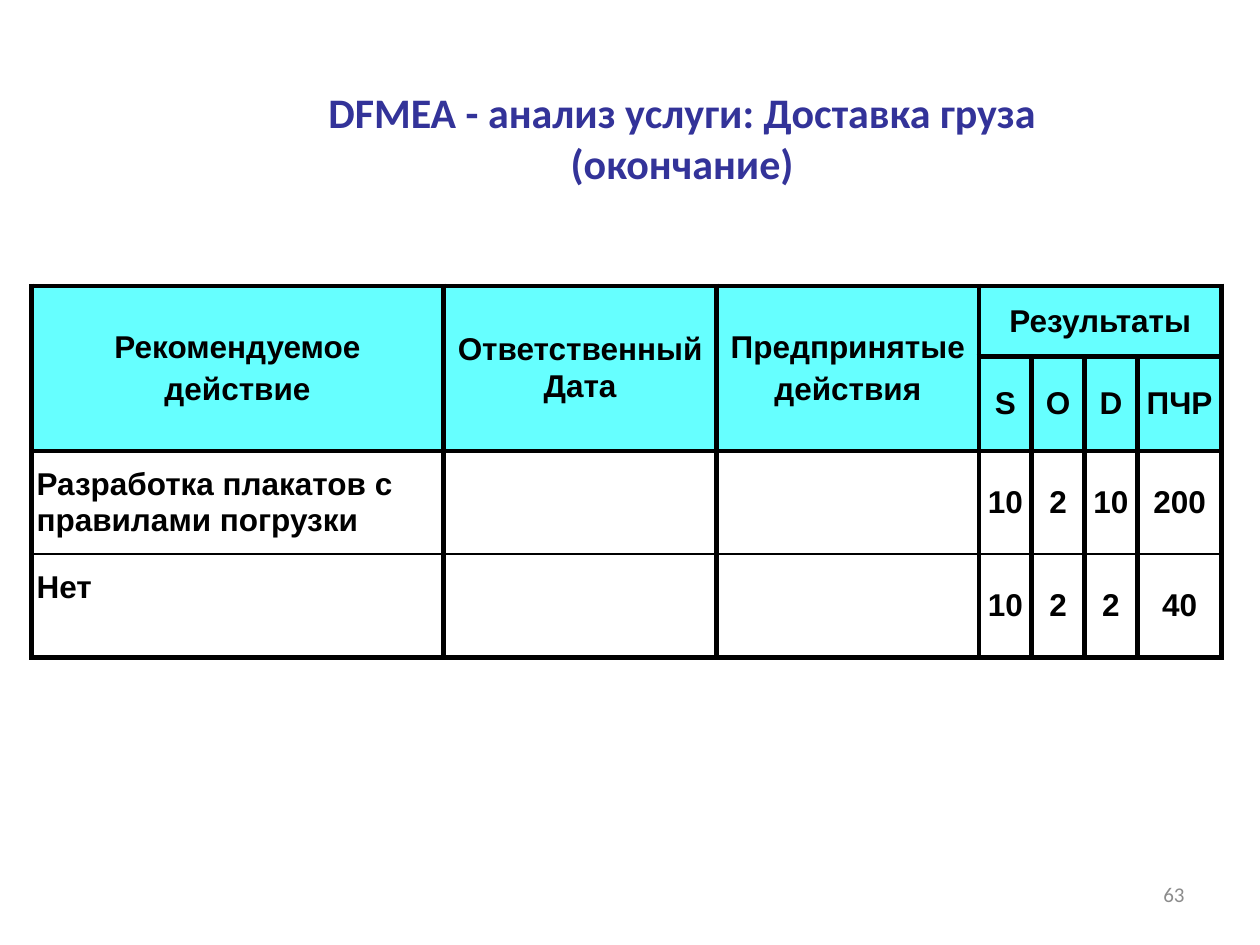
from dataclasses import dataclass
from typing import Optional

import lxml.etree
import pptx
import pptx.dml.color
import pptx.enum.text
import pptx.oxml.ns
import pptx.util

Pt = pptx.util.Pt
Align = pptx.enum.text.PP_ALIGN
Anchor = pptx.enum.text.MSO_ANCHOR


@dataclass(frozen=True)
class Theme:
    title_color: str = "333399"
    text_color: str = "000000"
    number_color: str = "8C8C8C"
    header_fill: str = "66FFFF"
    border_color: str = "000000"
    title_font: str = "Calibri"
    table_font: str = "Arial"
    title_size: float = 24
    table_size: float = 18
    number_size: float = 12
    thick: float = 3
    thin: float = 1


@dataclass(frozen=True)
class CellText:
    row: int
    column: int
    text: str
    align: Align = Align.CENTER
    space_before: float = 3.6
    bottom_margin: float = 3.6


THEME = Theme()
COLUMN_WIDTHS = [235.4, 156.2, 149.8, 30.2, 30.2, 30.2, 48.2]
ROW_HEIGHTS = [40.3, 54, 59, 59]
HEADER_ROWS = 2
MERGES = [((0, 0), (1, 0)), ((0, 1), (1, 1)), ((0, 2), (1, 2)), ((0, 3), (0, 6))]
RATINGS = [["S", "O", "D", "ПЧР"], ["10", "2", "10", "200"], ["10", "2", "2", "40"]]
CELL_TEXTS = [
    CellText(0, 0, "Рекомендуемое\nдействие"),
    CellText(0, 1, "Ответственный\nДата", space_before=0.9),
    CellText(0, 2, "Предпринятые\nдействия"),
    CellText(0, 3, "Результаты"),
    CellText(2, 0, "Разработка плакатов с правилами погрузки", Align.LEFT),
    CellText(3, 0, "Нет", Align.LEFT, bottom_margin=24),
] + [
    CellText(row, column, text)
    for row, ratings in enumerate(RATINGS, start=1)
    for column, text in enumerate(ratings, start=3)
]


def style_paragraph(paragraph, align: Align, font: str, size: float,
                    color: str, bold: bool) -> None:
    paragraph.alignment = align
    paragraph.font.name = font
    paragraph.font.size = Pt(size)
    paragraph.font.bold = bold
    paragraph.font.color.rgb = pptx.dml.color.RGBColor.from_string(color)


def set_borders(cell, top: float, bottom: float) -> None:
    properties = cell._tc.get_or_add_tcPr()
    name = pptx.oxml.ns.qn
    widths = {"a:lnL": THEME.thick, "a:lnR": THEME.thick, "a:lnT": top, "a:lnB": bottom}
    for tag, width in widths.items():
        line = lxml.etree.SubElement(properties, name(tag), w=str(Pt(width)))
        fill = lxml.etree.SubElement(line, name("a:solidFill"))
        lxml.etree.SubElement(fill, name("a:srgbClr"), val=THEME.border_color)


def format_cell(cell, row: int) -> None:
    last_row = len(ROW_HEIGHTS) - 1
    top = THEME.thin if row == last_row else THEME.thick
    bottom = THEME.thin if row == last_row - 1 else THEME.thick
    set_borders(cell, top, bottom)
    if row < HEADER_ROWS:
        cell.fill.solid()
        cell.fill.fore_color.rgb = pptx.dml.color.RGBColor.from_string(THEME.header_fill)
    else:
        cell.fill.background()
    cell.vertical_anchor = Anchor.MIDDLE
    cell.margin_left = cell.margin_right = Pt(2.9)
    cell.margin_top = cell.margin_bottom = Pt(3.6)


def write_cell(table, item: CellText) -> None:
    cell = table.cell(item.row, item.column)
    cell.text = item.text
    cell.margin_bottom = Pt(item.bottom_margin)
    for paragraph in cell.text_frame.paragraphs:
        style_paragraph(paragraph, item.align, THEME.table_font, THEME.table_size,
                        THEME.text_color, True)
        paragraph.space_before = Pt(item.space_before)


def add_analysis_table(slide) -> None:
    table = slide.shapes.add_table(
        len(ROW_HEIGHTS), len(COLUMN_WIDTHS), Pt(18), Pt(163.4),
        Pt(sum(COLUMN_WIDTHS)), Pt(sum(ROW_HEIGHTS))).table
    table.first_row = table.horz_banding = False
    for column, width in zip(table.columns, COLUMN_WIDTHS):
        column.width = Pt(width)
    for index, (row, height) in enumerate(zip(table.rows, ROW_HEIGHTS)):
        row.height = Pt(height)
        for cell in row.cells:
            format_cell(cell, index)
    for first, last in MERGES:
        table.cell(*first).merge(table.cell(*last))
    for item in CELL_TEXTS:
        write_cell(table, item)


def add_title(slide) -> None:
    title = slide.shapes.title
    title.left, title.top, title.width, title.height = Pt(136), Pt(46), Pt(507.6), Pt(65)
    frame = title.text_frame
    frame.text = "DFMEA - анализ услуги: Доставка груза\v(окончание)"
    frame.word_wrap = True
    frame.auto_size = pptx.enum.text.MSO_AUTO_SIZE.SHAPE_TO_FIT_TEXT
    frame.vertical_anchor = Anchor.TOP
    style_paragraph(frame.paragraphs[0], Align.CENTER, THEME.title_font,
                    THEME.title_size, THEME.title_color, True)


def add_slide_number(slide, number: str) -> None:
    frame = slide.shapes.add_textbox(Pt(516), Pt(492), Pt(168), Pt(37.5)).text_frame
    frame.text = number
    frame.word_wrap = True
    frame.vertical_anchor = Anchor.MIDDLE
    style_paragraph(frame.paragraphs[0], Align.RIGHT, THEME.title_font,
                    THEME.number_size, THEME.number_color, False)


def main() -> None:
    presentation = pptx.Presentation()
    presentation.slide_width, presentation.slide_height = Pt(720), Pt(540)
    # Title Only layout
    slide = presentation.slides.add_slide(presentation.slide_layouts[5])
    add_slide_number(slide, "63")
    add_title(slide)
    add_analysis_table(slide)
    presentation.save("out.pptx")


if __name__ == "__main__":
    main()
